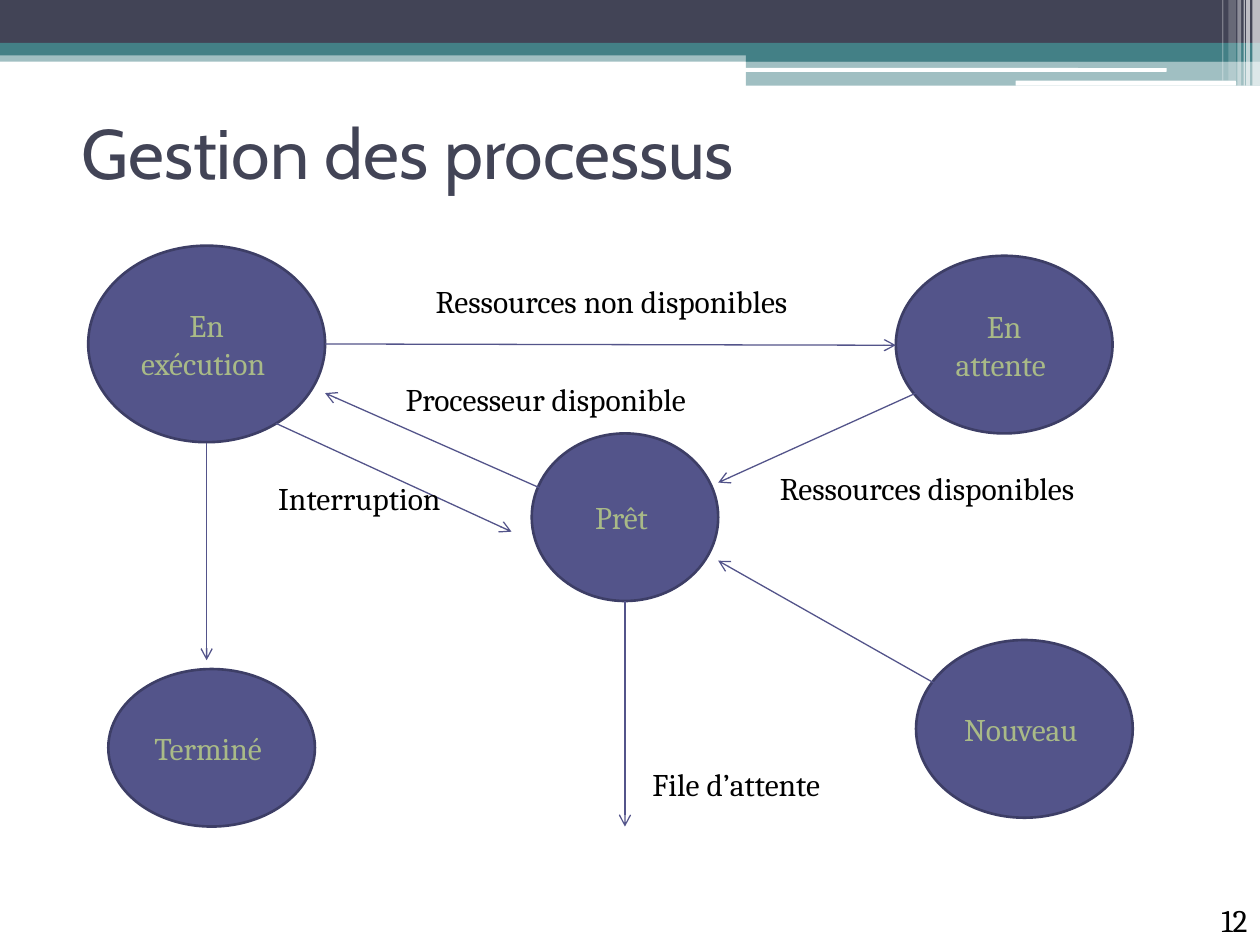
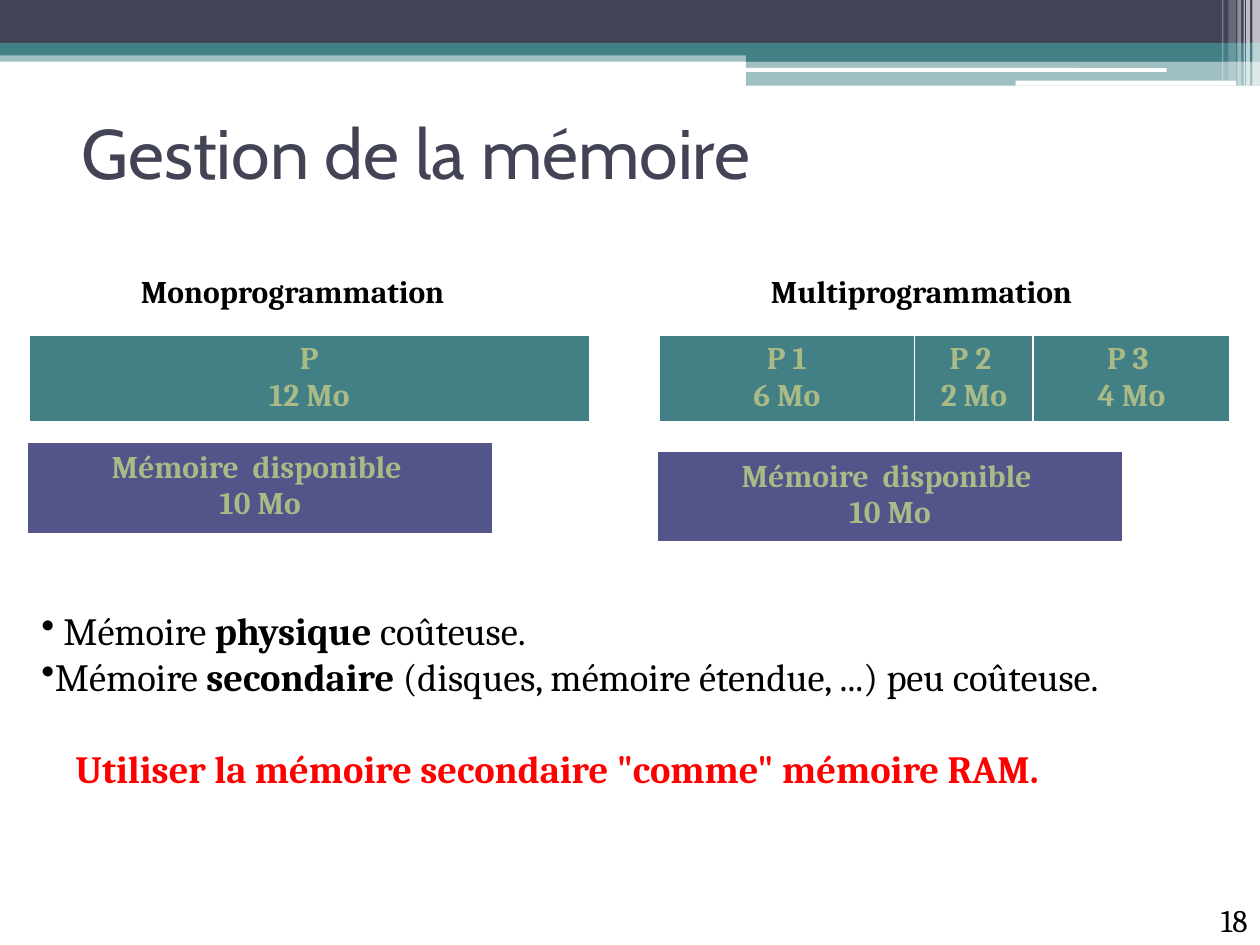
"""Two course slides: process states and memory management."""
from lxml import etree
from pptx import Presentation
from pptx.dml.color import RGBColor
from pptx.enum import shapes, text
from pptx.oxml import ns
from pptx.util import Inches, Pt

DARK = RGBColor(0x42, 0x44, 0x56)
TEAL = RGBColor(0x43, 0x80, 0x86)
INDIGO = RGBColor(0x53, 0x54, 0x8A)
OUTLINE = RGBColor(0x3D, 0x3E, 0x66)
SAGE = RGBColor(0xA9, 0xBA, 0x87)
WHITE = RGBColor(0xFF, 0xFF, 0xFF)
BLACK = RGBColor(0, 0, 0)
RED = RGBColor(0xFF, 0, 0)
TITLE_FONT, BODY_FONT = "Cabin", "Cambria"
RECT, ROUND = shapes.MSO_SHAPE.RECTANGLE, shapes.MSO_SHAPE.ROUNDED_RECTANGLE
CENTER, RIGHT = text.PP_ALIGN.CENTER, text.PP_ALIGN.RIGHT

BANDS = [
    (RECT, (0, 0.4, 10, 0.09), TEAL, 50),
    (RECT, (0, 0, 10, 0.34), DARK, 100),
    (RECT, (0, 0.34, 10, 0.1), TEAL, 100),
    (RECT, (5.92, 0.39, 4.08, 0.1), TEAL, 100),
    (RECT, (5.92, 0.48, 4.08, 0.2), TEAL, 50),
    (ROUND, (5.91, 0.54, 3.35, 0.03), WHITE, 100),
    (ROUND, (8.06, 0.64, 1.75, 0.04), WHITE, 100),
]
STREAKS = [
    (9.94, 0.06, 0.68, 65), (9.89, 0.03, 0.68, 65), (9.87, 0.01, 0.68, 60),
    (9.82, 0.03, 0.68, 40), (9.75, 0.06, 0.64, 20), (9.7, 0.01, 0.64, 30),
]
BANDS += [(RECT, (x, 0, w, h), WHITE, alpha) for x, w, h, alpha in STREAKS]

STATES = [
    ("Nouveau ", (7.27, 5.08, 1.72, 1.41)),
    ("Prêt ", (4.22, 3.44, 1.48, 1.33)),
    ("En attente ", (7.11, 2.03, 1.72, 1.41)),
    ("En exécution ", (0.7, 1.95, 1.88, 1.56)),
    ("Terminé ", (0.86, 5.31, 1.64, 1.25)),
]
TRANSITIONS = [
    (2.58, 2.73, 7.11, 2.74), (7.27, 3.12, 5.7, 3.83),
    (4.96, 4.77, 4.96, 6.56), (4.37, 3.91, 2.58, 3.12),
    (1.64, 3.52, 1.64, 5.24), (7.5, 5.47, 5.7, 4.45),
    (2.19, 3.36, 4.06, 4.22),
]
TRANSITION_LABELS = [
    ("Ressources non disponibles", (3.36, 2.19, 3.28, 0.4)),
    ("Ressources disponibles", (6.09, 3.67, 2.79, 0.4)),
    ("File d’attente", (5.08, 6.02, 1.67, 0.4)),
    ("Interruption", (2.11, 3.75, 1.66, 0.4)),
    ("Processeur disponible", (3.12, 2.97, 2.71, 0.4)),
]

MODES = [
    ("Monoprogrammation", (1.02, 2.11, 3.03, 0.4)),
    ("Multiprogrammation", (6.02, 2.11, 2.98, 0.4)),
]
AVAILABLE = [(["Mémoire  disponible ", "10 Mo"], 3.67)]
WHITE_EDGES = {"L": 1, "R": 1, "T": 1, "B": 3}
INDIGO_EDGES = dict.fromkeys("LRTB", 1)
MEMORY_TABLES = [
    (5.23, 2.66, [(["P 1", "6 Mo"], 2.03), (["P 2 ", "2 Mo"], 0.94),
                  (["P 3 ", "4 Mo"], 1.56)], TEAL, WHITE, WHITE_EDGES),
    (0.23, 2.66, [(["P", "12 Mo"], 4.45)], TEAL, WHITE, WHITE_EDGES),
    (5.23, 3.59, AVAILABLE, INDIGO, INDIGO, INDIGO_EDGES),
    (0.23, 3.52, AVAILABLE, INDIGO, INDIGO, INDIGO_EDGES),
]
ROW_HEIGHT = 0.69
MEMORY_KINDS = [
    (" Mémoire ", "physique", " coûteuse."),
    ("Mémoire ", "secondaire", " (disques, mémoire étendue, ...) peu coûteuse."),
]
CONCLUSION = 'Utiliser la mémoire secondaire "comme" mémoire RAM.'


def inches(values):
    return [Inches(v) for v in values]


def child(parent, tag, **attrs):
    return etree.SubElement(parent, ns.qn(tag), attrs)


def style(p, size=18, color=BLACK, bold=False, align=None, font=BODY_FONT):
    p.font.name, p.font.size, p.font.bold = font, Pt(size), bold
    p.font.color.rgb = color
    p.alignment = align


def write(tf, lines, **look):
    tf.text = "\n".join(lines)
    for p in tf.paragraphs:
        style(p, **look)


def add_label(slide, words, box, anchor=text.MSO_ANCHOR.TOP, **look):
    tf = slide.shapes.add_textbox(*inches(box)).text_frame
    tf.word_wrap = True
    tf.vertical_anchor = anchor
    write(tf, [words], **look)


def add_filled(slide, kind, box, color, alpha=100):
    sp = slide.shapes.add_shape(kind, *inches(box))
    sp.shadow.inherit = False
    sp.fill.solid()
    sp.fill.fore_color.rgb = color
    sp.line.fill.background()
    if alpha < 100:
        srgb = sp.element.spPr.find(ns.qn("a:solidFill"))[0]
        child(srgb, "a:alpha", val=str(alpha * 1000))
    return sp


def add_state(slide, name, box):
    sp = add_filled(slide, shapes.MSO_SHAPE.OVAL, box, INDIGO)
    sp.line.color.rgb = OUTLINE
    sp.line.width = Pt(1.5)
    sp.text_frame.vertical_anchor = text.MSO_ANCHOR.MIDDLE
    write(sp.text_frame, [name], color=SAGE, align=CENTER)


def add_arrow(slide, ends):
    line = slide.shapes.add_connector(shapes.MSO_CONNECTOR.STRAIGHT, *inches(ends))
    line.line.color.rgb = INDIGO
    line.line.width = Pt(0.75)
    spPr = line.element.spPr
    child(spPr.find(ns.qn("a:ln")), "a:tailEnd", type="arrow")
    child(spPr, "a:effectLst")


def add_memory(slide, left, top, cells, fill, edge, widths):
    total = sum(width for _, width in cells)
    frame = slide.shapes.add_table(1, len(cells), *inches((left, top, total, ROW_HEIGHT)))
    table = frame.table
    table.first_row = table.horz_banding = False
    for i, (lines, width) in enumerate(cells):
        table.columns[i].width = Inches(width)
        cell = table.cell(0, i)
        write(cell.text_frame, lines, color=SAGE, bold=True, align=CENTER)
        tcPr = cell.fill and cell._tc.get_or_add_tcPr()
        for side, points in widths.items():
            ln = child(tcPr, f"a:ln{side}", w=str(Pt(points)))
            child(child(ln, "a:solidFill"), "a:srgbClr", val=str(edge))
        cell.fill.solid()
        cell.fill.fore_color.rgb = fill


def add_notes_on_memory(slide):
    tf = slide.shapes.add_textbox(*inches((0.23, 4.77, 9.74, 1.95))).text_frame
    tf.word_wrap = True
    for i, parts in enumerate(MEMORY_KINDS):
        p = tf.add_paragraph() if i else tf.paragraphs[0]
        style(p, size=22)
        for j, part in enumerate(parts):
            r = p.add_run()
            r.text = part
            r.font.bold = j == 1
        child(p._p.get_or_add_pPr(), "a:buChar", char="•")
        pPr = p._p.get_or_add_pPr()
        pPr.insert(0, pPr[-1])
    p = tf.add_paragraph()
    p.text = CONCLUSION
    style(p, size=22, color=RED, bold=True)
    p.space_before = Pt(26)
    p._p.get_or_add_pPr().set("marL", str(Inches(0.27)))


def add_slide(prs, layout, title, number):
    slide = prs.slides.add_slide(layout)
    sp = slide.shapes.title
    sp.left, sp.top, sp.width, sp.height = inches((0.55, 0.62, 9, 1.17))
    sp.text_frame.vertical_anchor = text.MSO_ANCHOR.MIDDLE
    write(sp.text_frame, [title], size=40, color=DARK, font=TITLE_FONT,
          align=text.PP_ALIGN.LEFT)
    add_label(slide, number, (9.17, 7.1, 0.83, 0.4), text.MSO_ANCHOR.BOTTOM, align=RIGHT)
    return slide


def move_bands_to_layout(slide, layout):
    for ph in list(layout.placeholders)[1:]:
        ph.element.getparent().remove(ph.element)
    for band in BANDS:
        layout.shapes.element.append(add_filled(slide, *band).element)


def main():
    prs = Presentation()
    prs.slide_width, prs.slide_height = inches((10, 7.5))
    layout = prs.slide_layouts[5]

    processes = add_slide(prs, layout, "Gestion des processus", "12")
    move_bands_to_layout(processes, layout)
    for name, box in STATES:
        add_state(processes, name, box)
    for ends in TRANSITIONS:
        add_arrow(processes, ends)
    for words, box in TRANSITION_LABELS:
        add_label(processes, words, box)

    memory = add_slide(prs, layout, "Gestion de la mémoire", "18")
    for table in MEMORY_TABLES:
        add_memory(memory, *table)
    for words, box in MODES:
        add_label(memory, words, box, bold=True)
    add_notes_on_memory(memory)

    prs.save("out.pptx")


if __name__ == "__main__":
    main()
